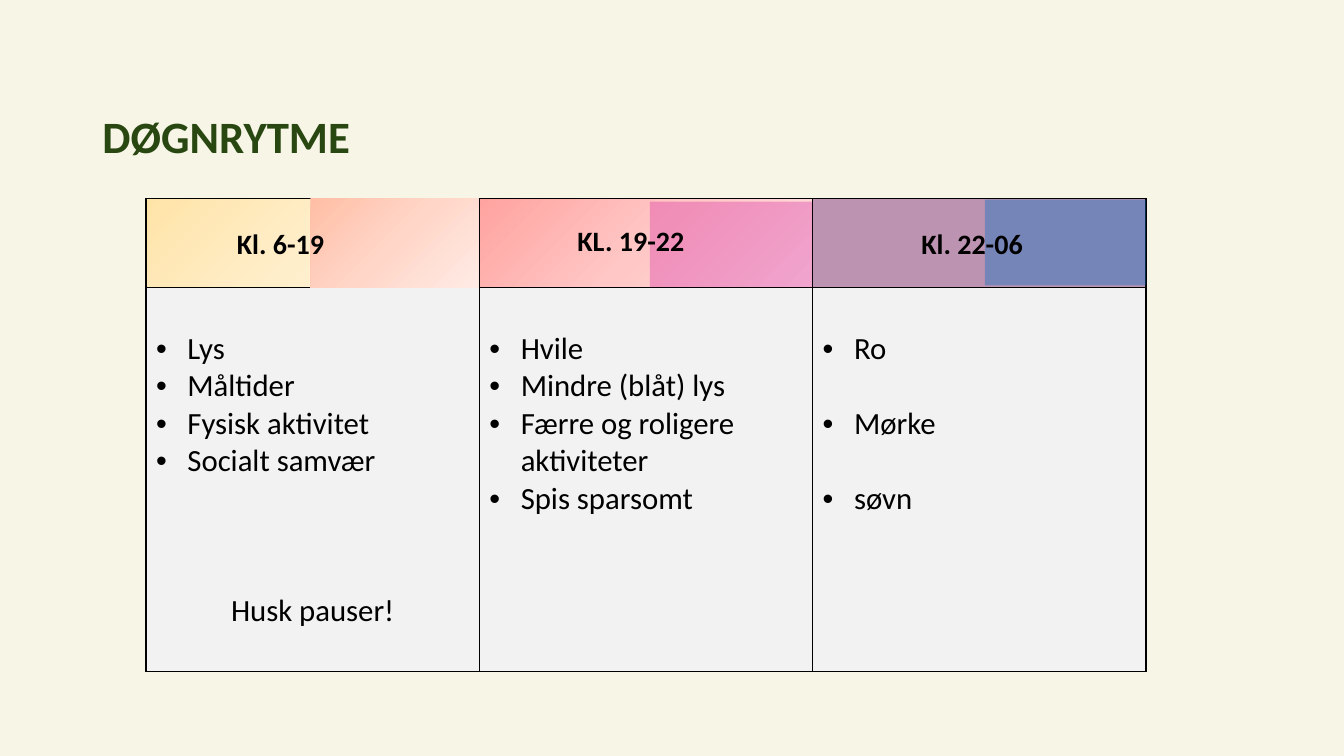
from copy import deepcopy
from dataclasses import dataclass

from lxml.etree import SubElement
from pptx import Presentation
from pptx.dml.color import RGBColor
from pptx.dml.fill import FillFormat
from pptx.enum.shapes import MSO_SHAPE
from pptx.enum.text import MSO_ANCHOR, PP_ALIGN
from pptx.oxml import parse_xml
from pptx.oxml.ns import nsdecls, qn
from pptx.util import Cm, Pt

COLOURS = {
    "background": "F7F6E6",
    "heading": "294711",
    "ink": "000000",
    "body": "F2F2F2",
}
FONT = "Calibri"
TABLE_LEFT, TABLE_TOP = 3.68, 5.0
COLUMN_WIDTH, HEADER_HEIGHT, BODY_HEIGHT = 8.4, 2.24, 9.68
HANG = 0.79
LINE = 26.85
HEADING_STYLE = {"name": FONT, "size": Pt(32), "bold": True}
HOURS_STYLE = {"name": FONT, "size": Pt(20), "bold": True}
ADVICE_STYLE = {"name": FONT, "size": Pt(22), "bold": False}


@dataclass(frozen=True)
class Tint:
    stops: tuple[str, ...]
    opacity: int = 100


@dataclass(frozen=True)
class Box:
    left: float
    top: float
    width: float
    height: float

    def lengths(self) -> tuple[Cm, ...]:
        return Cm(self.left), Cm(self.top), Cm(self.width), Cm(self.height)


@dataclass(frozen=True)
class Advice:
    words: str
    lines_before: int = 0
    bulleted: bool = True


@dataclass(frozen=True)
class Period:
    hours: str
    hours_box: Box
    early: Tint
    late: Tint
    late_box: Box
    advice: tuple[Advice, ...]


PERIODS = (
    Period(
        "Kl. 6-19", Box(5.97, 5.72, 3.0, 0.79),
        Tint(("FFE4A8", "FFEECA", "FFF6E5")),
        Tint(("FFBEA5", "FFD6C8", "FFEBE4")), Box(7.82, 5.0, 4.24, 2.24),
        (Advice("Lys"), Advice("Måltider"), Advice("Fysisk aktivitet"),
         Advice("Socialt samvær"), Advice("Husk pauser!", 3, False)),
    ),
    Period(
        "KL. 19-22", Box(14.55, 5.64, 3.2, 1.37),
        Tint(("FFA3A0", "FFC7C5", "FFE4E3")),
        Tint(("CC0099",), 28), Box(16.38, 5.08, 4.09, 2.16),
        (Advice("Hvile"), Advice("Mindre (blåt) lys"),
         Advice("Færre og roligere aktiviteter"), Advice("Spis sparsomt")),
    ),
    Period(
        "Kl. 22-06", Box(23.22, 5.7, 3.2, 1.19),
        Tint(("660066",), 40),
        Tint(("0070C0",), 38), Box(24.82, 5.03, 4.06, 2.16),
        (Advice("Ro"), Advice("Mørke", 1), Advice("søvn", 1)),
    ),
)


def colour(code: str) -> RGBColor:
    return RGBColor.from_string(code)


def paint(fill: FillFormat, element, tint: Tint) -> None:
    if len(tint.stops) == 1:
        fill.solid()
        fill.fore_color.rgb = colour(tint.stops[0])
        if tint.opacity < 100:
            solid = element.find(qn("a:solidFill"))
            SubElement(solid[0], qn("a:alpha"), val=str(tint.opacity * 1000))
        return
    fill.gradient()
    stop_list = element.find(qn("a:gradFill")).find(qn("a:gsLst"))
    stop_list.insert(1, deepcopy(stop_list[0]))
    fill.gradient_angle = 315
    for place, (stop, code) in enumerate(zip(fill.gradient_stops, tint.stops)):
        stop.position = place / 2
        stop.color.rgb = colour(code)


def style_font(font, style: dict, code: str) -> None:
    for attribute, value in style.items():
        setattr(font, attribute, value)
    font.color.rgb = colour(code)


def fill_cell(cell, tint: Tint) -> None:
    properties = cell._tc.get_or_add_tcPr()
    paint(cell.fill, properties, tint)
    for place, side in enumerate("LRTB"):
        properties.insert(place, parse_xml(
            f'<a:ln{side} {nsdecls("a")} w="12700"><a:solidFill>'
            f'<a:srgbClr val="{COLOURS["ink"]}"/></a:solidFill></a:ln{side}>'))


def write_advice(cell, advice: tuple[Advice, ...]) -> None:
    cell.margin_top = Pt(LINE + 3.6)
    frame = cell.text_frame
    for place, item in enumerate(advice):
        paragraph = frame.add_paragraph() if place else frame.paragraphs[0]
        if item.lines_before:
            paragraph.space_before = Pt(item.lines_before * LINE)
        if item.bulleted:
            layout = paragraph._p.get_or_add_pPr()
            layout.set("marL", str(Cm(HANG)))
            layout.set("indent", str(-Cm(HANG)))
            SubElement(layout, qn("a:buFont"), typeface="Arial")
            SubElement(layout, qn("a:buChar"), char="•")
        else:
            paragraph.alignment = PP_ALIGN.CENTER
        run = paragraph.add_run()
        run.text = item.words
        style_font(run.font, ADVICE_STYLE, COLOURS["ink"])


def add_text(slide, words: str, box: Box, style: dict, code: str):
    frame = slide.shapes.add_textbox(*box.lengths()).text_frame
    frame.word_wrap = True
    run = frame.paragraphs[0].add_run()
    run.text = words
    style_font(run.font, style, code)
    return frame


def add_hours(slide, period: Period) -> None:
    half = slide.shapes.add_shape(MSO_SHAPE.RECTANGLE, *period.late_box.lengths())
    half.shadow.inherit = False
    half.line.fill.background()
    paint(half.fill, half.element.spPr, period.late)
    hours = add_text(slide, period.hours, period.hours_box, HOURS_STYLE, COLOURS["ink"])
    for side in ("left", "top", "right", "bottom"):
        setattr(hours, f"margin_{side}", 0)


def add_rhythm_table(slide) -> None:
    area = Box(TABLE_LEFT, TABLE_TOP, COLUMN_WIDTH * len(PERIODS),
               HEADER_HEIGHT + BODY_HEIGHT)
    rhythm = slide.shapes.add_table(2, len(PERIODS), *area.lengths()).table
    rhythm.first_row = False
    rhythm.horz_banding = False
    for row, height in zip(rhythm.rows, (HEADER_HEIGHT, BODY_HEIGHT)):
        row.height = Cm(height)
    for place, period in enumerate(PERIODS):
        rhythm.columns[place].width = Cm(COLUMN_WIDTH)
        fill_cell(rhythm.cell(0, place), period.early)
        fill_cell(rhythm.cell(1, place), Tint((COLOURS["body"],)))
        write_advice(rhythm.cell(1, place), period.advice)


def main() -> None:
    deck = Presentation()
    deck.slide_width, deck.slide_height = Cm(33.87), Cm(19.05)
    slide = deck.slides.add_slide(deck.slide_layouts[6])
    slide.background.fill.solid()
    slide.background.fill.fore_color.rgb = colour(COLOURS["background"])
    heading = add_text(slide, "DØGNRYTME", Box(2.33, 2.44, 29.21, 2.13),
                       HEADING_STYLE, COLOURS["heading"])
    heading.vertical_anchor = MSO_ANCHOR.MIDDLE
    heading.paragraphs[0].line_spacing = 0.9
    add_rhythm_table(slide)
    for period in PERIODS:
        add_hours(slide, period)
    deck.save("out.pptx")


if __name__ == "__main__":
    main()
